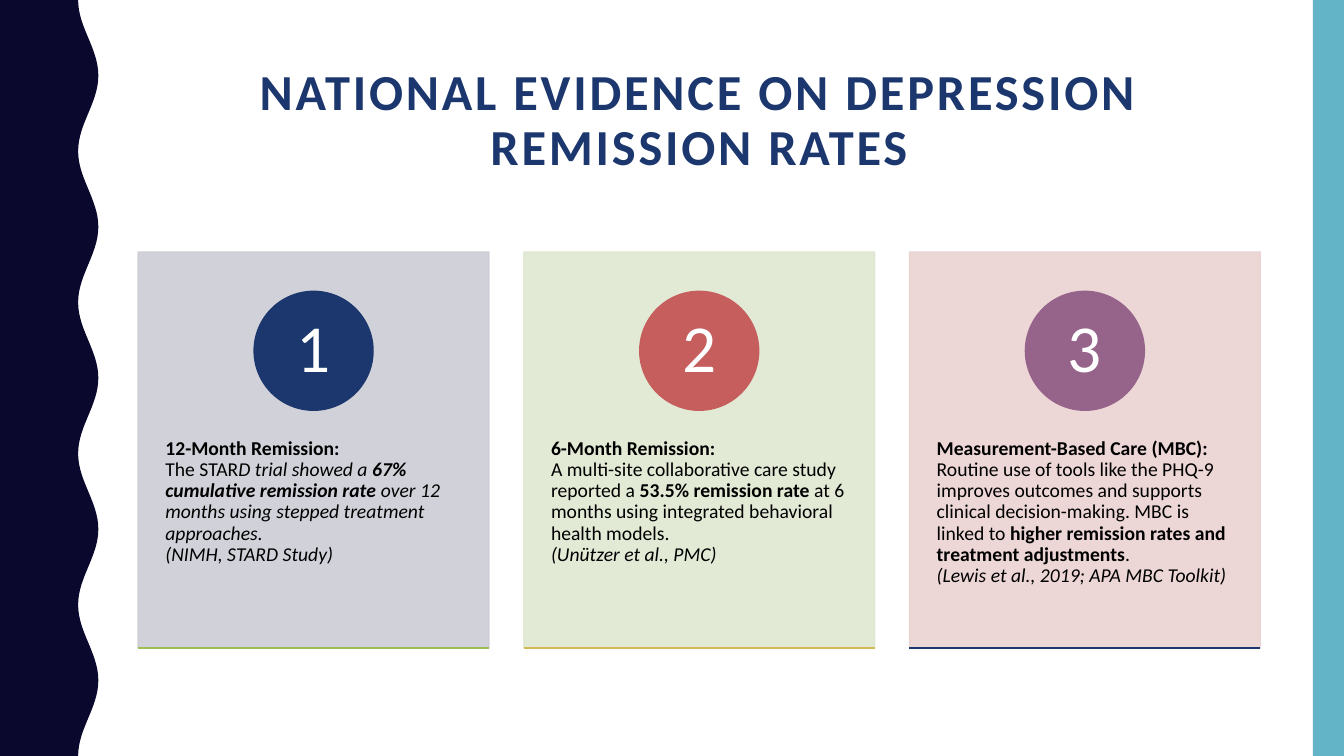
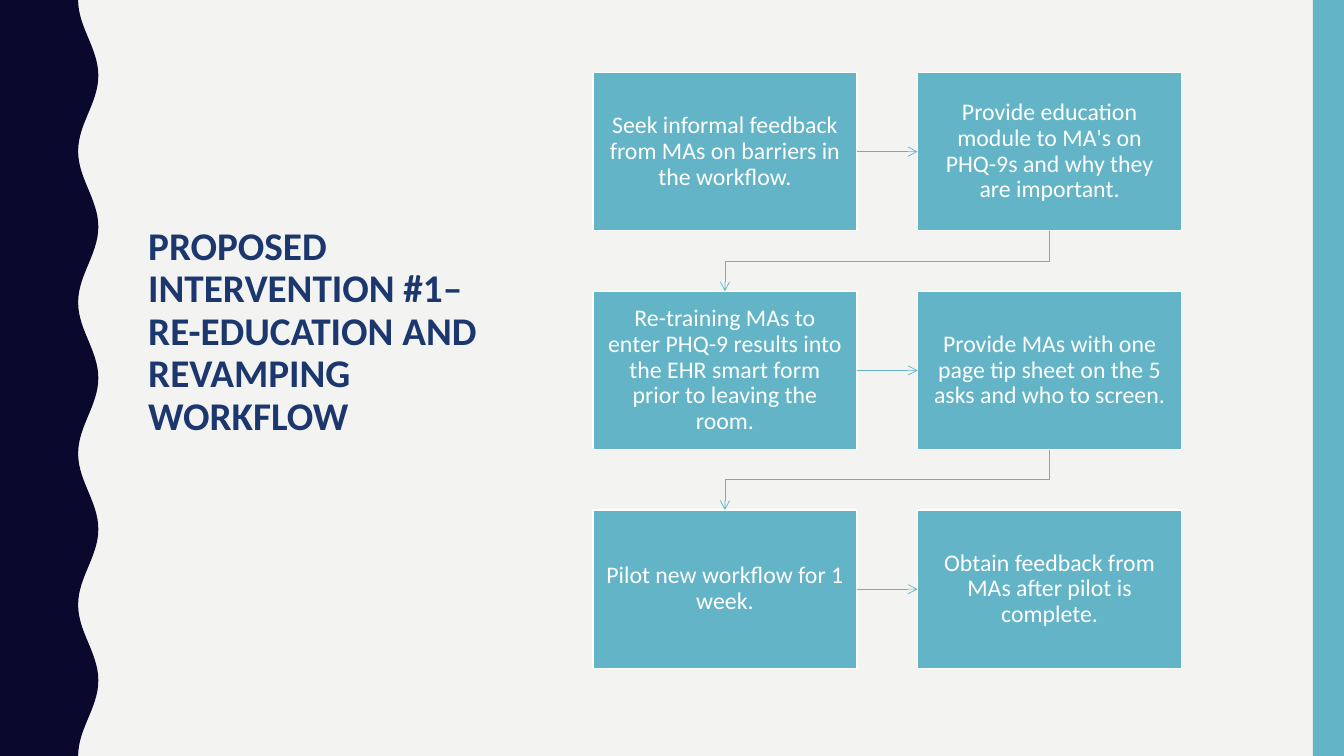
import math
import pptx
import pptx.util
import pptx.dml.color
import pptx.enum.shapes
import pptx.enum.text
import pptx.oxml.ns
import pptx.oxml.xmlchemy

Inches, Pt = pptx.util.Inches, pptx.util.Pt
SHAPE = pptx.enum.shapes.MSO_SHAPE
LINK = pptx.enum.shapes.MSO_CONNECTOR
ALIGN = pptx.enum.text.PP_ALIGN
ANCHOR = pptx.enum.text.MSO_ANCHOR
qn = pptx.oxml.ns.qn
new_element = pptx.oxml.xmlchemy.OxmlElement

W, H = 13.33, 7.5
FONT = "Calibri"
COLORS = {
    "white": "FFFFFF", "paper": "F3F3F2", "black": "000000",
    "wave": "0B082E", "teal": "62B4C6", "navy": "1B376E",
    "gray": "CDCED5", "sage": "DFE8D1", "blush": "EAD2D2",
    "red": "C65E5E", "plum": "96648A", "green": "9EBE55", "gold": "D3BA55",
}

EVIDENCE_TITLE = "NATIONAL EVIDENCE ON DEPRESSION REMISSION RATES"
CARDS = [
    {"fill": "gray", "badge": "navy", "rule": "green", "text": [
        [("12-Month Remission:", "b")],
        [("The STAR", ""), ("D trial showed a ", "i"),
         ("67% cumulative remission rate", "bi"),
         (" over 12 months using stepped treatment approaches.", "i")],
        [("(NIMH, STARD Study)", "i")]]},
    {"fill": "sage", "badge": "red", "rule": "gold", "text": [
        [("6-Month Remission:", "b")],
        [("A multi-site collaborative care study reported a ", ""),
         ("53.5% remission rate", "b"),
         (" at 6 months using integrated behavioral health models.", "")],
        [("(Unützer et al., PMC)", "i")]]},
    {"fill": "blush", "badge": "plum", "rule": "navy", "text": [
        [("Measurement-Based Care (MBC):", "b")],
        [("Routine use of tools like the PHQ-9 improves outcomes and supports "
          "clinical decision-making. MBC is linked to ", ""),
         ("higher remission rates and treatment adjustments", "b"), (".", "")],
        [("(Lewis et al., 2019; APA MBC Toolkit)", "i")]]},
]

WORKFLOW_TITLE = "PROPOSED INTERVENTION #1– RE-EDUCATION AND REVAMPING WORKFLOW"
STEPS = [
    "Seek informal feedback from MAs on barriers in the workflow.",
    "Provide education module to MA's on PHQ-9s and why they are important.",
    "Re-training MAs to enter PHQ-9 results into the EHR smart form prior to leaving the room.",
    "Provide MAs with one page tip sheet on the 5 asks and who to screen.",
    "Pilot new workflow for 1 week.",
    "Obtain feedback from MAs after pilot is complete.",
]


def rgb(name):
    return pptx.dml.color.RGBColor.from_string(COLORS[name])


def paint(sp, fill, line=None):
    sp.shadow.inherit = False
    sp.fill.solid()
    sp.fill.fore_color.rgb = rgb(fill)
    if line:
        sp.line.color.rgb = rgb(line)
        sp.line.width = Pt(1)
    else:
        sp.line.fill.background()


def add_box(s, kind, x, y, w, h, fill, line=None):
    sp = s.shapes.add_shape(kind, Inches(x), Inches(y), Inches(w), Inches(h))
    paint(sp, fill, line)
    return sp


def set_frame(tf, anchor, sides, top=None):
    tf.word_wrap = True
    tf.vertical_anchor = anchor
    tf.margin_left = tf.margin_right = tf.margin_bottom = Inches(sides)
    tf.margin_top = Inches(sides if top is None else top)


def set_para(p, size, color, align=ALIGN.LEFT, bold=None):
    p.alignment = align
    p.line_spacing = 0.9
    p.font.name = FONT
    p.font.size = Pt(size)
    p.font.color.rgb = rgb(color)
    p.font.bold = bold


def add_label(sp, text, size, inset):
    tf = sp.text_frame
    set_frame(tf, ANCHOR.MIDDLE, inset)
    tf.text = text
    set_para(tf.paragraphs[0], size, "white", ALIGN.CENTER)


def style_line(c, color, width):
    c.line.color.rgb = rgb(color)
    c.line.width = Pt(width)
    c.element.spPr.append(new_element("a:effectLst"))


def add_wave(s):
    middle, swing, period, step = 0.875, 0.1, 1.5, 0.05
    points = []
    for i in range(round(H / step) + 1):
        y = i * step
        x = middle - swing * math.cos(2 * math.pi * y / period)
        points.append((Inches(x), Inches(y)))
    fb = s.shapes.build_freeform(0, 0)
    fb.add_line_segments(points + [(0, Inches(H))], close=True)
    paint(fb.convert_to_shape(), "wave")


def add_slide(prs, background, title, frame, size, align, spacing=0):
    s = prs.slides.add_slide(prs.slide_layouts[5])
    s.background.fill.solid()
    s.background.fill.fore_color.rgb = rgb(background)
    add_wave(s)
    add_box(s, SHAPE.RECTANGLE, W - 0.31, 0, 0.31, H, "teal")
    sp = s.shapes.title
    sp.left, sp.top, sp.width, sp.height = map(Inches, frame)
    tf = sp.text_frame
    tf.auto_size = pptx.enum.text.MSO_AUTO_SIZE.NONE
    tf.word_wrap = True
    tf.vertical_anchor = ANCHOR.MIDDLE
    p = tf.paragraphs[0]
    r = p.add_run()
    r.text = title
    set_para(p, size, "navy", align, True)
    if spacing:
        r._r.get_or_add_rPr().set("spc", str(spacing * 100))
    return s


def add_card(s, number, card, x, y, w, h):
    sp = add_box(s, SHAPE.RECTANGLE, x, y, w, h, card["fill"], card["fill"])
    for clr in sp.element.spPr.iter(qn("a:srgbClr")):
        alpha = new_element("a:alpha")
        alpha.set("val", "90000")
        clr.append(alpha)
    tf = sp.text_frame
    set_frame(tf, ANCHOR.TOP, 0.27, 1.85)
    for i, runs in enumerate(card["text"]):
        p = tf.add_paragraph() if i else tf.paragraphs[0]
        set_para(p, 14, "black")
        for text, style in runs:
            r = p.add_run()
            r.text = text
            r.font.bold = "b" in style
            r.font.italic = "i" in style
    d = 1.18
    badge = add_box(s, SHAPE.OVAL, x + (w - d) / 2, y + 0.39, d, d, card["badge"], card["badge"])
    add_label(badge, str(number), 48, 0)
    c = s.shapes.add_connector(LINK.STRAIGHT, Inches(x), Inches(y + h), Inches(x + w), Inches(y + h))
    style_line(c, card["rule"], 1)


def add_arrow(s, a, b, same_row):
    c = s.shapes.add_connector(LINK.STRAIGHT if same_row else LINK.ELBOW, 0, 0, 0, 0)
    c.begin_connect(a, 3 if same_row else 2)
    c.end_connect(b, 1 if same_row else 0)
    if not same_row:
        across, down = a.left - b.left, b.top - a.top - a.height
        cx = (a.left + b.left + a.width) // 2
        cy = (a.top + a.height + b.top) // 2
        c.left, c.top = cx - down // 2, cy - across // 2
        c.width, c.height = down, across
        xfrm = c.element.spPr.find(qn("a:xfrm"))
        xfrm.attrib.pop("flipH", None)
        xfrm.attrib.pop("flipV", None)
        xfrm.set("rot", "5400000")
    style_line(c, "teal", 0.5)
    tail = new_element("a:tailEnd")
    tail.set("type", "arrow")
    c.element.spPr.find(qn("a:ln")).append(tail)


def build_evidence(prs):
    s = add_slide(prs, "white", EVIDENCE_TITLE, (1.37, 0.42, 11.13, 1.57), 36, ALIGN.CENTER, 2)
    left, right, w = 1.37, 12.5, 3.48
    pitch = (right - left - w) / (len(CARDS) - 1)
    for i, card in enumerate(CARDS):
        add_card(s, i + 1, card, left + i * pitch, H / 3, w, 3.93)


def build_workflow(prs):
    s = add_slide(prs, "paper", WORKFLOW_TITLE, (1.37, 1.65, 3.7, 3.3), 28, ALIGN.LEFT)
    columns, w, h, gap = 2, 2.62, 1.57, 0.6
    boxes = []
    for i, text in enumerate(STEPS):
        row, col = divmod(i, columns)
        sp = add_box(s, SHAPE.RECTANGLE, 5.88 + col * (w + gap), 0.72 + row * (h + gap),
                     w, h, "teal", "white")
        add_label(sp, text, 17, 0.13)
        boxes.append(sp)
    for a, b in zip(boxes, boxes[1:]):
        add_arrow(s, a, b, a.top == b.top)


def main():
    prs = pptx.Presentation()
    prs.slide_width, prs.slide_height = Inches(W), Inches(H)
    build_evidence(prs)
    build_workflow(prs)
    prs.save("out.pptx")


if __name__ == "__main__":
    main()
